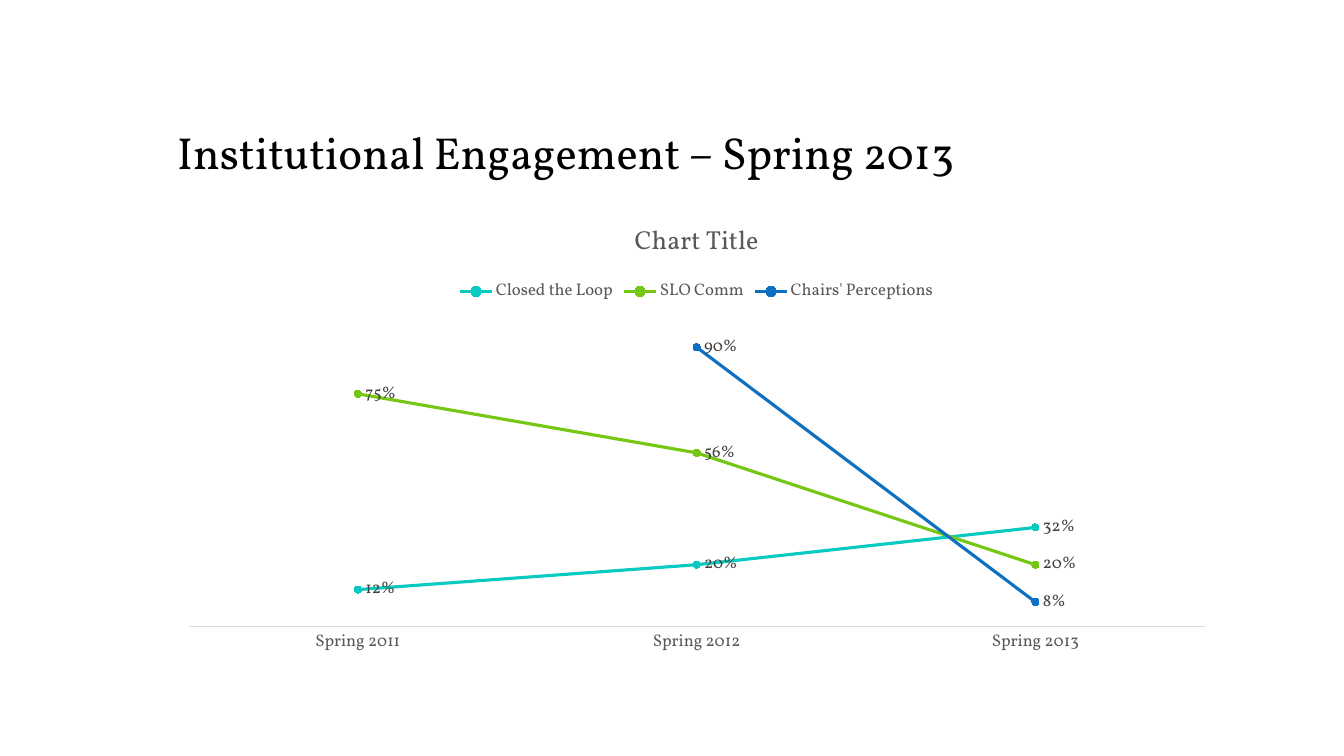
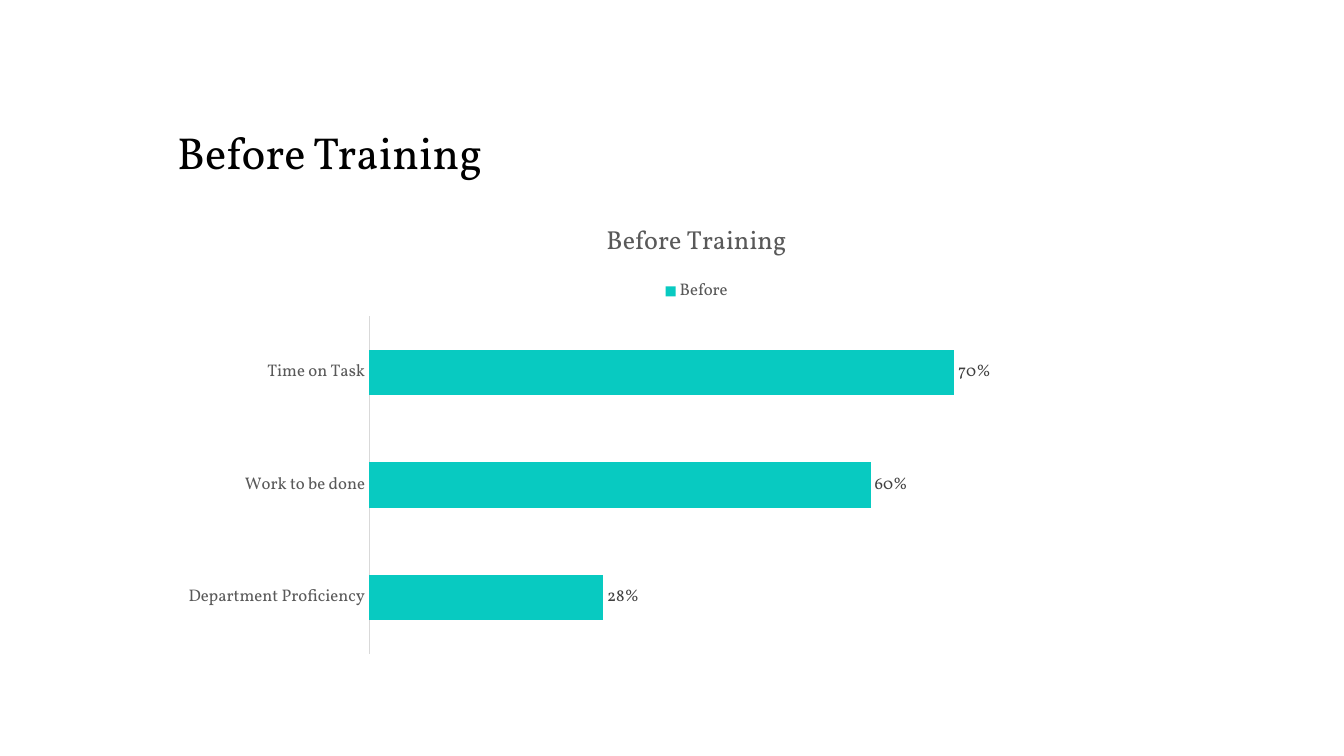
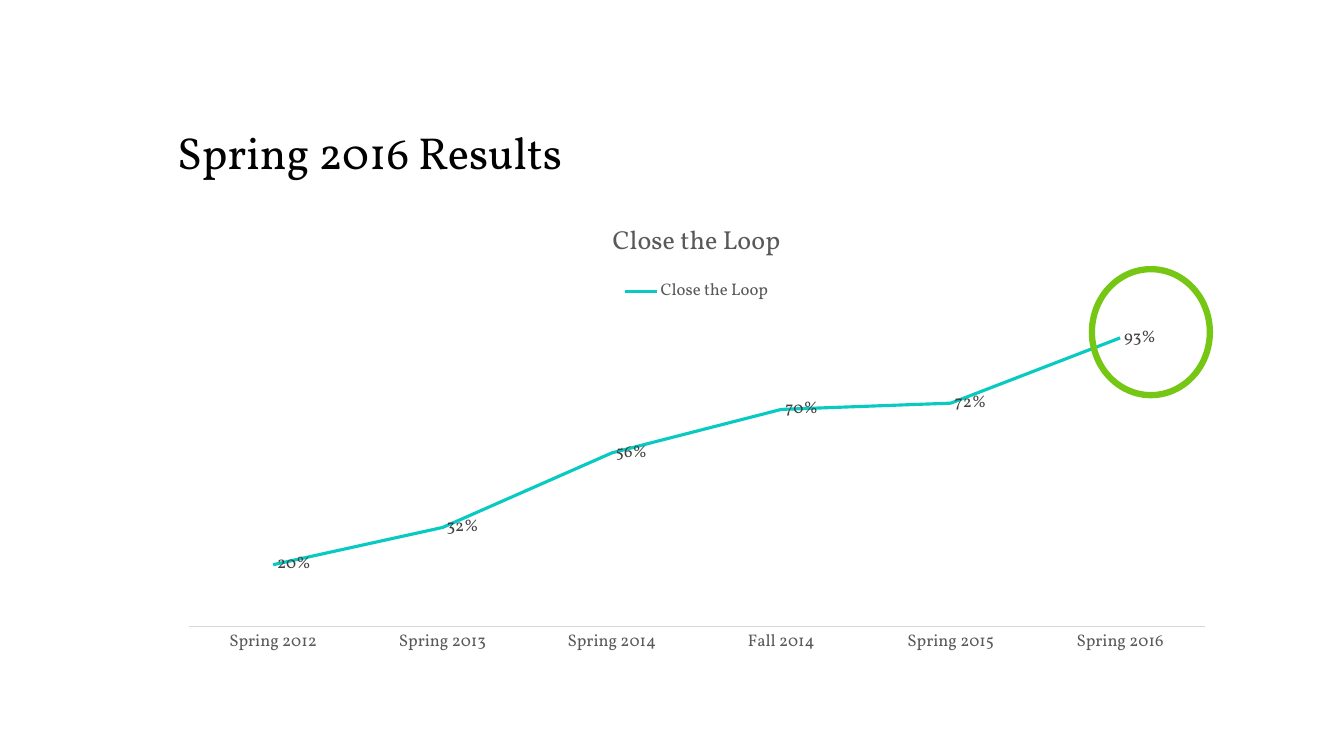
from pptx import Presentation
from pptx.chart.data import CategoryChartData
from pptx.dml.color import RGBColor
from pptx.enum.chart import (
    XL_CHART_TYPE, XL_LABEL_POSITION, XL_LEGEND_POSITION, XL_MARKER_STYLE, XL_TICK_MARK,
)
from pptx.enum.shapes import MSO_SHAPE
from pptx.enum.text import MSO_ANCHOR
from pptx.util import Inches, Pt

LINE = XL_CHART_TYPE.LINE
LINE_MARKERS = XL_CHART_TYPE.LINE_MARKERS
BAR = XL_CHART_TYPE.BAR_CLUSTERED
LABEL_RIGHT = XL_LABEL_POSITION.RIGHT
LABEL_OUTSIDE = XL_LABEL_POSITION.OUTSIDE_END
LEGEND_TOP = XL_LEGEND_POSITION.TOP
CIRCLE = XL_MARKER_STYLE.CIRCLE
NO_TICK = XL_TICK_MARK.NONE
ELLIPSE = MSO_SHAPE.OVAL
BOTTOM = MSO_ANCHOR.BOTTOM

FONT = "Vollkorn"
BLACK = RGBColor(0x00, 0x00, 0x00)
LABEL_GRAY = RGBColor(0x40, 0x40, 0x40)
TEXT_GRAY = RGBColor(0x59, 0x59, 0x59)
AXIS_GRAY = RGBColor(0xD9, 0xD9, 0xD9)
TEAL = RGBColor(0x08, 0xCA, 0xC1)
GREEN = RGBColor(0x76, 0xC7, 0x14)
BLUE = RGBColor(0x0E, 0x70, 0xC2)
SERIES_COLORS = (TEAL, GREEN, BLUE)

LEFT, CONTENT_WIDTH = Inches(1.66), Inches(10.5)
PERCENT = "0%"


def style_font(font, size, color):
    font.name = FONT
    font.size = Pt(size)
    font.bold = False
    font.color.rgb = color


def write_text(frame, text, size=12, color=BLACK, line_spacing=None):
    para = frame.paragraphs[0]
    para.line_spacing = line_spacing
    span = para.add_run()
    span.text = text
    style_font(span.font, size, color)


def add_titled_slide(deck, title):
    slide = deck.slides.add_slide(deck.slide_layouts[6])
    box = slide.shapes.add_textbox(LEFT, Inches(0.58), CONTENT_WIDTH, Inches(1.25))
    box.text_frame.word_wrap = True
    box.text_frame.vertical_anchor = BOTTOM
    write_text(box.text_frame, title, size=32, line_spacing=0.9)
    return slide


def style_axes(chart):
    category_axis = chart.category_axis
    category_axis.major_tick_mark = NO_TICK
    category_axis.minor_tick_mark = NO_TICK
    category_axis.has_major_gridlines = False
    style_font(category_axis.tick_labels.font, 12, TEXT_GRAY)
    category_axis.format.line.color.rgb = AXIS_GRAY
    category_axis.format.line.width = Pt(0.75)

    value_axis = chart.value_axis
    value_axis.minimum_scale = 0
    value_axis.maximum_scale = 1
    value_axis.has_major_gridlines = False
    value_axis.tick_labels.number_format = PERCENT
    value_axis.tick_labels.number_format_is_linked = False
    value_axis.visible = False


def style_series(series, color, kind):
    if kind == BAR:
        series.format.fill.solid()
        series.format.fill.fore_color.rgb = color
    else:
        series.smooth = False
        series.format.line.color.rgb = color
        series.format.line.width = Pt(2.25)
    if kind == LINE_MARKERS:
        marker = series.marker
        marker.style = CIRCLE
        marker.size = 5
        marker.format.fill.solid()
        marker.format.fill.fore_color.rgb = color
        marker.format.line.color.rgb = color

    labels = series.data_labels
    labels.show_value = True
    labels.number_format = PERCENT
    labels.number_format_is_linked = False
    labels.position = LABEL_OUTSIDE if kind == BAR else LABEL_RIGHT
    style_font(labels.font, 12, LABEL_GRAY)


def add_percent_chart(slide, kind, title, categories, values_by_name):
    data = CategoryChartData(number_format=PERCENT)
    data.categories = categories
    for name, values in values_by_name.items():
        data.add_series(name, values)
    chart = slide.shapes.add_chart(
        kind, LEFT, Inches(2), CONTENT_WIDTH, Inches(4.58), data).chart
    style_font(chart.font, 10, BLACK)

    chart.has_title = True
    write_text(chart.chart_title.text_frame, title, size=18.6, color=TEXT_GRAY)
    chart.chart_title.include_in_layout = False
    chart.has_legend = True
    chart.legend.position = LEGEND_TOP
    chart.legend.include_in_layout = False
    style_font(chart.legend.font, 12, TEXT_GRAY)

    style_axes(chart)
    plot = chart.plots[0]
    plot.vary_by_categories = False
    if kind == BAR:
        plot.gap_width = 150
        plot.overlap = -25
    for series, color in zip(plot.series, SERIES_COLORS):
        style_series(series, color, kind)


def add_highlight_ring(slide, left, top, width, height):
    ring = slide.shapes.add_shape(
        ELLIPSE, Inches(left), Inches(top), Inches(width), Inches(height))
    ring.shadow.inherit = False
    ring.fill.background()
    ring.line.color.rgb = GREEN
    ring.line.width = Pt(4.5)


def main():
    deck = Presentation()
    deck.slide_width, deck.slide_height = Inches(13.33), Inches(7.5)

    slide = add_titled_slide(deck, "Institutional Engagement – Spring 2013")
    add_percent_chart(
        slide, LINE_MARKERS, "Chart Title",
        ["Spring 2011", "Spring 2012", "Spring 2013"],
        {
            "Closed the Loop": [0.12, 0.2, 0.32],
            "SLO Comm": [0.75, 0.56, 0.2],
            "Chairs' Perceptions": [None, 0.9, 0.08],
        })

    slide = add_titled_slide(deck, "Before Training")
    add_percent_chart(
        slide, BAR, "Before Training",
        ["Department Proficiency", "Work to be done", "Time on Task"],
        {"Before": [0.28, 0.6, 0.7]})

    slide = add_titled_slide(deck, "Spring 2016 Results")
    add_percent_chart(
        slide, LINE, "Close the Loop",
        ["Spring 2012", "Spring 2013", "Spring 2014",
         "Fall 2014", "Spring 2015", "Spring 2016"],
        {"Close the Loop": [0.2, 0.32, 0.56, 0.7, 0.72, 0.93]})
    add_highlight_ring(slide, 10.83, 2.67, 1.17, 1.25)

    deck.save("out.pptx")


if __name__ == "__main__":
    main()
